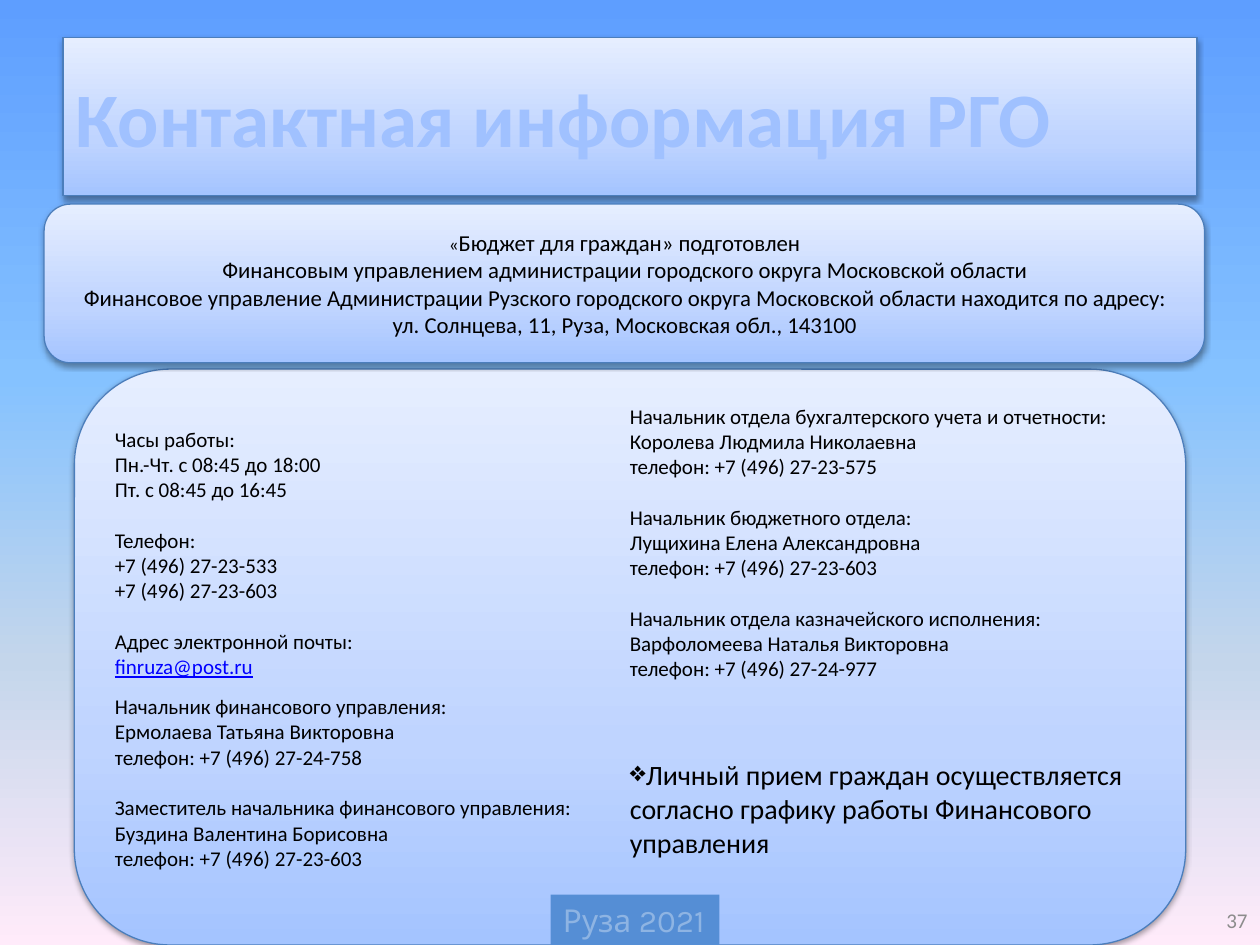
from lxml import etree
from pptx import Presentation
from pptx.dml.color import RGBColor
from pptx.enum.shapes import MSO_SHAPE
from pptx.enum.text import MSO_ANCHOR, MSO_AUTO_SIZE, PP_ALIGN
from pptx.oxml import parse_xml
from pptx.oxml.ns import nsdecls, qn
from pptx.util import Inches, Pt

BLACK = RGBColor(0x00, 0x00, 0x00)
BORDER = RGBColor(0x4B, 0x7E, 0xBC)
BADGE = RGBColor(0x55, 0x8E, 0xD5)
BADGE_TEXT = RGBColor(0x8E, 0xB4, 0xE3)
LINK = RGBColor(0x00, 0x00, 0xFF)
GREY = RGBColor(0x8C, 0x8C, 0x8C)
SKY = [(0, RGBColor(0x5E, 0x9E, 0xFF)), (40, RGBColor(0x85, 0xC2, 0xFF)),
       (70, RGBColor(0xC4, 0xD6, 0xEB)), (100, RGBColor(0xFF, 0xEB, 0xFA))]
PANEL = [(0, RGBColor(0xA4, 0xC4, 0xFF)), (35, RGBColor(0xBF, 0xD4, 0xFF)),
         (100, RGBColor(0xE6, 0xEE, 0xFF))]
LETTERS = [(0, RGBColor(0xBF, 0xD3, 0xF9)), (9, RGBColor(0xA0, 0xC1, 0xFF)),
           (50, RGBColor(0x00, 0x3D, 0x85)), (79, RGBColor(0xA0, 0xC1, 0xFF)),
           (100, RGBColor(0xBF, 0xD3, 0xF9))]


def set_gradient(fill, owner, stops, angle):
    fill.gradient()
    fill.gradient_angle = angle
    stop_list = next(owner.iter(qn("a:gsLst")))
    for stop in list(stop_list):
        stop_list.remove(stop)
    for position, color in stops:
        stop = etree.SubElement(stop_list, qn("a:gs"), pos=str(position * 1000))
        etree.SubElement(stop, qn("a:srgbClr"), val=str(color))


def add_text(paragraph, text, size, color=BLACK, font="Calibri"):
    run = paragraph.add_run()
    run.text = text
    run.font.size = Pt(size)
    run.font.name = font
    run.font.color.rgb = color
    return run


prs = Presentation()
prs.slide_width, prs.slide_height = Inches(10), Inches(7.5)
slide = prs.slides.add_slide(prs.slide_layouts[5])
set_gradient(slide.background.fill, slide.element, SKY, 270)

# Three panels: title, contacts, address
title = slide.shapes.title
title.left, title.top = Inches(0.5), Inches(0.3)
title.width, title.height = Inches(9), Inches(1.25)
contacts = slide.shapes.add_shape(
    MSO_SHAPE.ROUNDED_RECTANGLE, Inches(0.59), Inches(2.93), Inches(8.82), Inches(4.57))
address = slide.shapes.add_shape(
    MSO_SHAPE.ROUNDED_RECTANGLE, Inches(0.35), Inches(1.62), Inches(9.21), Inches(1.26))
for panel in (title, contacts, address):
    properties = panel.element.spPr
    set_gradient(panel.fill, properties, PANEL, 90)
    panel.line.color.rgb = BORDER
    panel.line.width = Pt(0.75)
    panel.shadow.inherit = False
    properties.find(qn("a:effectLst")).append(parse_xml(
        f'<a:outerShdw {nsdecls("a")} blurRad="40000" dist="20000" dir="5400000" '
        'rotWithShape="0"><a:srgbClr val="000000"><a:alpha val="38000"/></a:srgbClr>'
        '</a:outerShdw>'))
    panel.text_frame.word_wrap = True
    panel.text_frame.auto_size = MSO_AUTO_SIZE.NONE
    panel.text_frame.vertical_anchor = MSO_ANCHOR.MIDDLE

# Title with gradient letters and a thin outline
heading = title.text_frame.paragraphs[0]
heading.alignment = PP_ALIGN.LEFT
heading_run = add_text(heading, "Контактная информация РГО", 44)
heading_run.font.bold = True
heading_style = heading_run.font.fill
letter_properties = heading.runs[0]._r.get_or_add_rPr()
set_gradient(heading_style, letter_properties, LETTERS, 270)
letter_properties.insert(0, parse_xml(
    f'<a:ln {nsdecls("a")} w="10541"><a:solidFill><a:srgbClr val="467AB8"/>'
    '</a:solidFill></a:ln>'))

# Address lines
address_lines = [
    [("«", 11), ("Бюджет для граждан» подготовлен", 13)],
    [("Финансовым управлением администрации городского округа Московской области", 13)],
    [("Финансовое управление Администрации Рузского городского округа "
      "Московской области находится по адресу:", 13)],
    [("ул. Солнцева, 11, Руза, Московская обл., 143100", 13)],
]
for index, line in enumerate(address_lines):
    frame = address.text_frame
    paragraph = frame.add_paragraph() if index else frame.paragraphs[0]
    paragraph.alignment = PP_ALIGN.CENTER
    for text, size in line:
        add_text(paragraph, text, size)

# Contacts: the left column sits in the panel, the right one beside it
left_column = contacts.text_frame
left_column.vertical_anchor = MSO_ANCHOR.TOP
left_column.margin_top = Inches(0.23)
left_column.margin_right = Inches(4.1)
right_column = slide.shapes.add_textbox(
    Inches(4.9), Inches(3.15), Inches(4.3), Inches(3.8)).text_frame
right_column.word_wrap = True

# Each group: space before it in points, then its lines
left_groups = [
    (0, ["Часы работы:", "Пн.-Чт. с 08:45 до 18:00", "Пт. с 08:45 до 16:45"]),
    (14.6, ["Телефон:", "+7 (496) 27-23-533", "+7 (496) 27-23-603"]),
    (14.6, ["Адрес электронной почты:", "finruza@post.ru"]),
    (8.5, ["Начальник финансового управления:", "Ермолаева Татьяна Викторовна",
           "телефон: +7 (496) 27-24-758"]),
    (14.6, ["Заместитель начальника финансового управления:",
            "Буздина Валентина Борисовна", "телефон: +7 (496) 27-23-603"]),
]
right_groups = [
    (0, ["Начальник отдела бухгалтерского учета и отчетности:",
         "Королева Людмила Николаевна", "телефон: +7 (496) 27-23-575"]),
    (14.6, ["Начальник бюджетного отдела:", "Лущихина Елена Александровна",
            "телефон: +7 (496) 27-23-603"]),
    (14.6, ["Начальник отдела казначейского исполнения:",
            "Варфоломеева Наталья Викторовна", "телефон: +7 (496) 27-24-977"]),
]
for column, groups in ((left_column, left_groups), (right_column, right_groups)):
    paragraph = column.paragraphs[0]
    for gap, lines in groups:
        for index, line in enumerate(lines):
            if paragraph.runs:
                paragraph = column.add_paragraph()
            paragraph.alignment = PP_ALIGN.LEFT
            if gap and index == 0:
                paragraph.space_before = Pt(gap)
            is_email = "@" in line
            run = add_text(paragraph, line, 12, LINK if is_email else BLACK)
            if is_email:
                run.font.underline = True

# Reception note with a diamond bullet
reception = right_column.add_paragraph()
reception.space_before = Pt(44)
bullet_properties = reception._p.get_or_add_pPr()
bullet_properties.set("marL", "0")
bullet_properties.set("indent", "0")
etree.SubElement(bullet_properties, qn("a:buChar"), char="❖")
add_text(reception, "Личный прием граждан осуществляется согласно графику работы "
                    "Финансового управления", 16)

# Town and year badge
badge = slide.shapes.add_shape(
    MSO_SHAPE.RECTANGLE, Inches(4.37), Inches(7.1), Inches(1.34), Inches(0.4))
badge.shadow.inherit = False
badge.fill.solid()
badge.fill.fore_color.rgb = BADGE
badge.line.fill.background()
badge.text_frame.word_wrap = False
badge.text_frame.vertical_anchor = MSO_ANCHOR.TOP
badge_line = badge.text_frame.paragraphs[0]
badge_line.alignment = PP_ALIGN.LEFT
add_text(badge_line, "Руза 2021", 18, BADGE_TEXT, "Karla")

# Page number
page_number = slide.shapes.add_textbox(
    Inches(7.67), Inches(7.1), Inches(2.33), Inches(0.4)).text_frame
page_number.word_wrap = True
page_number.vertical_anchor = MSO_ANCHOR.MIDDLE
page_number.paragraphs[0].alignment = PP_ALIGN.RIGHT
add_text(page_number.paragraphs[0], "37", 12, GREY)

prs.save("out.pptx")
